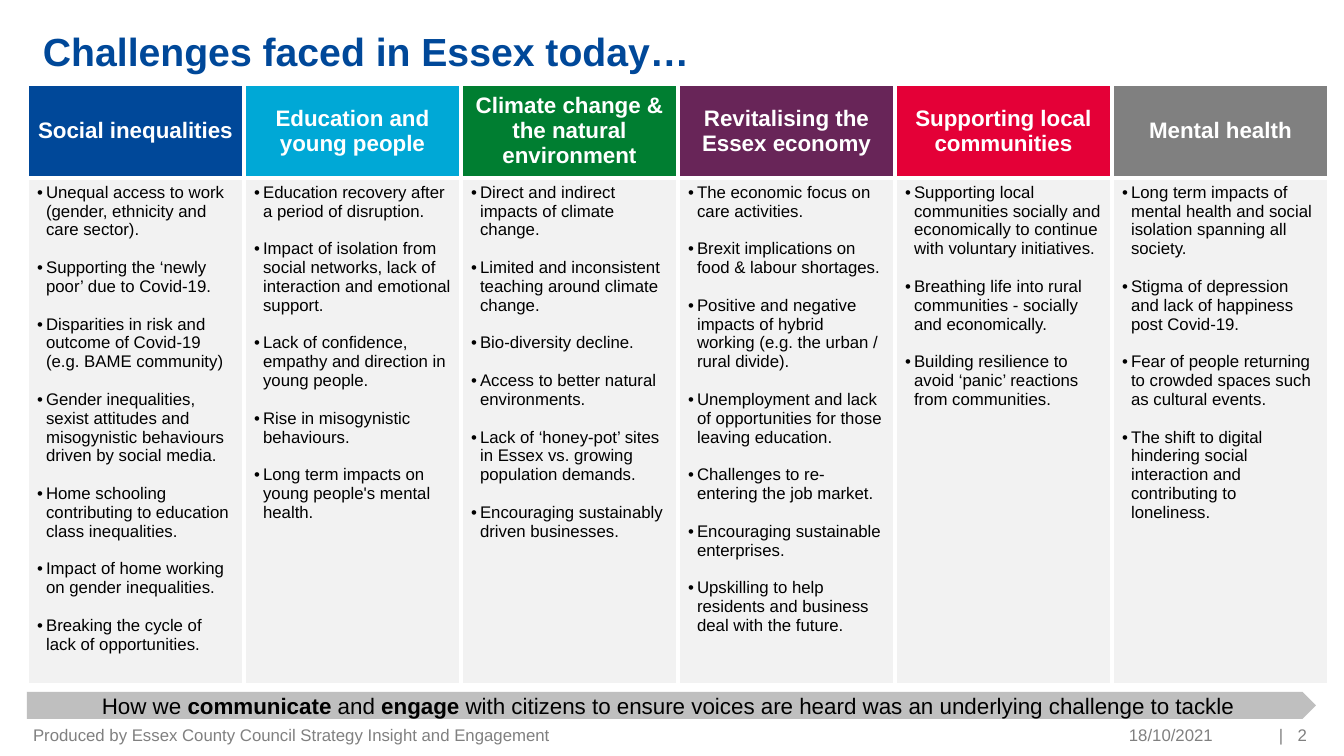
from dataclasses import dataclass

from lxml.etree import SubElement
from pptx import Presentation
from pptx.dml.color import RGBColor
from pptx.enum.shapes import MSO_SHAPE
from pptx.enum.text import MSO_ANCHOR, PP_ALIGN
from pptx.oxml.ns import qn
from pptx.util import Emu, Pt

SCALE = 914400 / 100.8
FONT = "Arial"
COLORS = {
    "blue": "004899", "cyan": "00A8D6", "green": "007E31",
    "plum": "682558", "red": "E40037", "grey": "808080",
    "pale": "F2F2F2", "band": "BFBFBF", "white": "FFFFFF", "black": "000000",
}


@dataclass
class Theme:
    title: str
    color: str
    points: list[str]


@dataclass
class Label:
    text: str
    box: tuple[int, int, int, int]
    insets: tuple[int, int, int, int]
    size: int = 12
    color: str = "grey"
    bold: bool = False
    align: PP_ALIGN = PP_ALIGN.LEFT
    anchor: MSO_ANCHOR = MSO_ANCHOR.MIDDLE
    pitch: float = 1.0
    tab: int = 0


THEMES = [
    Theme("Social inequalities", "blue", [
        "Unequal access to work (gender, ethnicity and care sector).",
        "Supporting the ‘newly poor’ due to Covid-19.",
        "Disparities in risk and outcome of Covid-19 (e.g. BAME community)",
        "Gender inequalities, sexist attitudes and misogynistic behaviours driven by social media.",
        "Home schooling contributing to education class inequalities.",
        "Impact of home working on gender inequalities.",
        "Breaking the cycle of lack of opportunities.",
    ]),
    Theme("Education and young people", "cyan", [
        "Education recovery after a period of disruption.",
        "Impact of isolation from social networks, lack of interaction and emotional support.",
        "Lack of confidence, empathy and direction in young people.",
        "Rise in misogynistic behaviours.",
        "Long term impacts on young people's mental health.",
    ]),
    Theme("Climate change & the natural environment", "green", [
        "Direct and indirect impacts of climate change.",
        "Limited and inconsistent teaching around climate change.",
        "Bio-diversity decline.",
        "Access to better natural environments.",
        "Lack of ‘honey-pot’ sites in Essex vs. growing population demands.",
        "Encouraging sustainably driven businesses.",
    ]),
    Theme("Revitalising the Essex economy", "plum", [
        "The economic focus on care activities.",
        "Brexit implications on food & labour shortages.",
        "Positive and negative impacts of hybrid working (e.g. the urban / rural divide).",
        "Unemployment and lack of opportunities for those leaving education.",
        "Challenges to re-entering the job market.",
        "Encouraging sustainable enterprises.",
        "Upskilling to help residents and business deal with the future.",
    ]),
    Theme("Supporting local communities", "red", [
        "Supporting local communities socially and economically to continue with voluntary initiatives.",
        "Breathing life into rural communities - socially and economically.",
        "Building resilience to avoid ‘panic’ reactions from communities.",
    ]),
    Theme("Mental health", "grey", [
        "Long term impacts of mental health and social isolation spanning all society.",
        "Stigma of depression and lack of happiness post Covid-19.",
        "Fear of people returning to crowded spaces such as cultural events.",
        "The shift to digital hindering social interaction and contributing to loneliness.",
    ]),
]

LABELS = [
    Label("Challenges faced in Essex today…", (33, 28, 1273, 91), (10, 5, 10, 0),
          28, "blue", True, anchor=MSO_ANCHOR.TOP, pitch=0.9),
    Label("Produced by Essex County Council Strategy Insight and Engagement",
          (33, 727, 635, 15), (0, 5, 10, 5)),
    Label("18/10/2021", (971, 727, 242, 15), (10, 5, 0, 5), align=PP_ALIGN.RIGHT),
    Label("|\t2", (1222, 727, 86, 15), (57, 5, 0, 5), tab=28),
]

CLAIM = [
    ("How we ", False), ("communicate", True), (" and ", False), ("engage", True),
    (" with citizens to ensure voices are heard was an underlying challenge to tackle", False),
]


def px(length: int) -> Emu:
    return Emu(round(length * SCALE))


def rgb(name: str) -> RGBColor:
    return RGBColor.from_string(COLORS[name])


def style(font, size: int, color: str, bold: bool = False) -> None:
    font.name, font.size, font.bold = FONT, Pt(size), bold
    font.color.rgb = rgb(color)


def add_label(slide, label: Label) -> None:
    frame = slide.shapes.add_textbox(*map(px, label.box)).text_frame
    frame.word_wrap = True
    frame.vertical_anchor = label.anchor
    (frame.margin_left, frame.margin_top,
     frame.margin_right, frame.margin_bottom) = map(px, label.insets)
    frame.text = label.text
    para = frame.paragraphs[0]
    para.alignment = label.align
    para.line_spacing = label.pitch
    if label.tab:
        tabs = SubElement(para._p.get_or_add_pPr(), qn("a:tabLst"))
        SubElement(tabs, qn("a:tab"), pos=str(px(label.tab)), algn="r")
    for run in para.runs:
        style(run.font, label.size, label.color, label.bold)


def fill_cell(cell, color: str) -> None:
    """Give a cell its fill and thick white borders."""
    props = cell._tc.get_or_add_tcPr()
    for side in ("lnL", "lnR", "lnT", "lnB"):
        line = SubElement(props, qn(f"a:{side}"), w=str(Pt(3)))
        paint = SubElement(line, qn("a:solidFill"))
        SubElement(paint, qn("a:srgbClr"), val=COLORS["white"])
    cell.fill.solid()
    cell.fill.fore_color.rgb = rgb(color)


def add_points(cell, points: list[str]) -> None:
    cell.text_frame.text = "\n".join(points)
    for index, para in enumerate(cell.text_frame.paragraphs):
        props = para._p.get_or_add_pPr()
        props.set("marL", str(px(9)))
        props.set("indent", str(px(-9)))
        if index:
            para.space_before = Pt(13.5)
        SubElement(props, qn("a:buFont"), typeface=FONT)
        SubElement(props, qn("a:buChar"), char="•")
        for run in para.runs:
            style(run.font, 12, "black")


def add_themes(slide) -> None:
    width, heights = 217, (94, 479)
    count = len(THEMES)
    table = slide.shapes.add_table(
        2, count, px(27), px(84), px(width * count), px(sum(heights))).table
    for row, height in zip(table.rows, heights):
        row.height = px(height)
    for col, theme in enumerate(THEMES):
        table.columns[col].width = px(width)
        head, body = table.cell(0, col), table.cell(1, col)
        fill_cell(head, theme.color)
        fill_cell(body, "pale")
        head.vertical_anchor = MSO_ANCHOR.MIDDLE
        head.text_frame.text = theme.title
        para = head.text_frame.paragraphs[0]
        para.alignment = PP_ALIGN.CENTER
        style(para.runs[0].font, 16, "white", True)
        add_points(body, theme.points)


def add_claim(slide) -> None:
    arrow = slide.shapes.add_shape(
        MSO_SHAPE.PENTAGON, px(27), px(692), px(1289), px(27))
    arrow.shadow.inherit = False
    arrow.fill.solid()
    arrow.fill.fore_color.rgb = rgb("band")
    arrow.line.fill.background()
    frame = arrow.text_frame
    frame.word_wrap = True
    frame.vertical_anchor = MSO_ANCHOR.MIDDLE
    frame.margin_top = frame.margin_bottom = 0
    para = frame.paragraphs[0]
    para.alignment = PP_ALIGN.CENTER
    for text, bold in CLAIM:
        run = para.add_run()
        run.text = text
        style(run.font, 16, "black", bold)


def main() -> None:
    deck = Presentation()
    deck.slide_width, deck.slide_height = px(1344), px(756)
    slide = deck.slides.add_slide(deck.slide_layouts[6])
    for label in LABELS:
        add_label(slide, label)
    add_themes(slide)
    add_claim(slide)
    deck.save("out.pptx")


if __name__ == "__main__":
    main()
